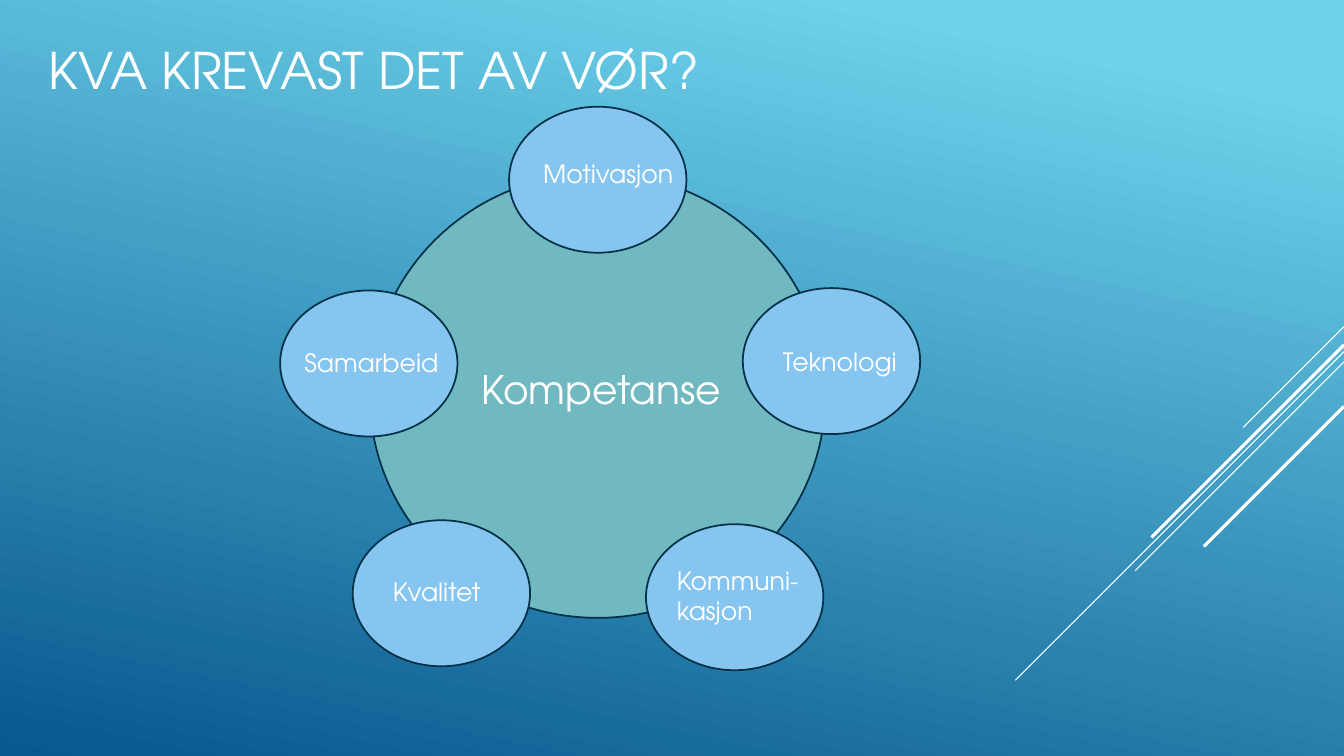
from lxml import etree
from pptx import Presentation
from pptx.dml.color import RGBColor
from pptx.enum.shapes import MSO_CONNECTOR, MSO_SHAPE
from pptx.enum.text import MSO_ANCHOR, MSO_AUTO_SIZE, PP_ALIGN
from pptx.oxml.ns import qn
from pptx.util import Cm, Pt

STRAIGHT = MSO_CONNECTOR.STRAIGHT
OVAL = MSO_SHAPE.OVAL
MIDDLE, TOP = MSO_ANCHOR.MIDDLE, MSO_ANCHOR.TOP
NO_FIT, GROW = MSO_AUTO_SIZE.NONE, MSO_AUTO_SIZE.SHAPE_TO_FIT_TEXT
LEFT = PP_ALIGN.LEFT

SLIDE_WIDTH, SLIDE_HEIGHT = 33.87, 19.05
BUBBLE_WIDTH, BUBBLE_HEIGHT = 4.47, 3.68
LABEL_WIDTH = 4.24

STRIPES = [
    (8.23, 2.54, 0.75),
    (8.86, 8.28, 0.75),
    (9.12, 5.26, 0.75),
    (8.69, 4.85, 2.25),
    (10.24, 3.53, 2.25),
]

BUBBLES = [
    ("Motivasjon", (12.83, 2.69), (13.44, 3.86), 1.02),
    ("Teknologi", (18.72, 7.26), (19.48, 8.61), 1.02),
    ("Samarbeid", (7.06, 7.32), (7.42, 8.64), 1.02),
    ("Kvalitet", (8.89, 13.11), (9.65, 14.4), 1.02),
    ("Kommuni-kasjon", (16.28, 13.21), (16.81, 14.12), 1.8),
]


def color(value):
    return RGBColor.from_string(value)


class SlideBuilder:
    font_name = "TeX Gyre Adventor"
    text_color = "FFFFFF"
    outline_color = "043148"

    def __init__(self, presentation):
        self.slide = presentation.slides.add_slide(presentation.slide_layouts[5])

    def background(self, start, end, angle):
        fill = self.slide.background.fill
        fill.gradient()
        fill.gradient_angle = angle
        for stop, (position, value) in zip(fill.gradient_stops, (start, end)):
            stop.position = position
            stop.color.rgb = color(value)

    def set_text(self, shape, text, size, anchor, fit):
        frame = shape.text_frame
        frame.word_wrap = True
        frame.auto_size = fit
        frame.vertical_anchor = anchor
        paragraph = frame.paragraphs[0]
        paragraph.alignment = LEFT
        run = paragraph.add_run()
        run.text = text
        run.font.name = self.font_name
        run.font.size = Pt(size)
        run.font.color.rgb = color(self.text_color)

    def title(self, text, left, top, width, height, size):
        shape = self.slide.shapes.title
        shape.left, shape.top = Cm(left), Cm(top)
        shape.width, shape.height = Cm(width), Cm(height)
        self.set_text(shape, text, size, MIDDLE, NO_FIT)

    def label(self, text, left, top, width, height, size):
        shape = self.slide.shapes.add_textbox(Cm(left), Cm(top), Cm(width), Cm(height))
        self.set_text(shape, text, size, TOP, GROW)

    def ellipse(self, left, top, width, height, fill):
        shape = self.slide.shapes.add_shape(OVAL, Cm(left), Cm(top), Cm(width), Cm(height))
        shape.shadow.inherit = False
        shape.fill.solid()
        shape.fill.fore_color.rgb = color(fill)
        shape.line.color.rgb = color(self.outline_color)
        shape.line.width = Pt(1.25)

    def stripe(self, top, reach, weight):
        line = self.slide.shapes.add_connector(
            STRAIGHT, Cm(SLIDE_WIDTH), Cm(top), Cm(SLIDE_WIDTH - reach), Cm(top + reach)
        )
        line.line.color.rgb = color(self.text_color)
        line.line.width = Pt(weight)
        etree.SubElement(line._element.spPr, qn("a:effectLst"))


def main():
    presentation = Presentation()
    presentation.slide_width = Cm(SLIDE_WIDTH)
    presentation.slide_height = Cm(SLIDE_HEIGHT)

    builder = SlideBuilder(presentation)
    builder.background((0.1, "6ED2EB"), (1, "06588E"), 258)
    for top, reach, weight in STRIPES:
        builder.stripe(top, reach, weight)
    builder.title("KVA KREVAST DET AV VØR?", 0.97, -0.36, 23.7, 4.19, 36)

    builder.ellipse(9.32, 4.37, 11.48, 11.2, "71B9C1")
    builder.label("Kompetanse", 11.89, 9.07, 9.02, 1.45, 28)
    for text, bubble_corner, label_corner, label_height in BUBBLES:
        builder.ellipse(*bubble_corner, BUBBLE_WIDTH, BUBBLE_HEIGHT, "86C5EF")
        builder.label(text, *label_corner, LABEL_WIDTH, label_height, 18)

    presentation.save("out.pptx")


if __name__ == "__main__":
    main()
